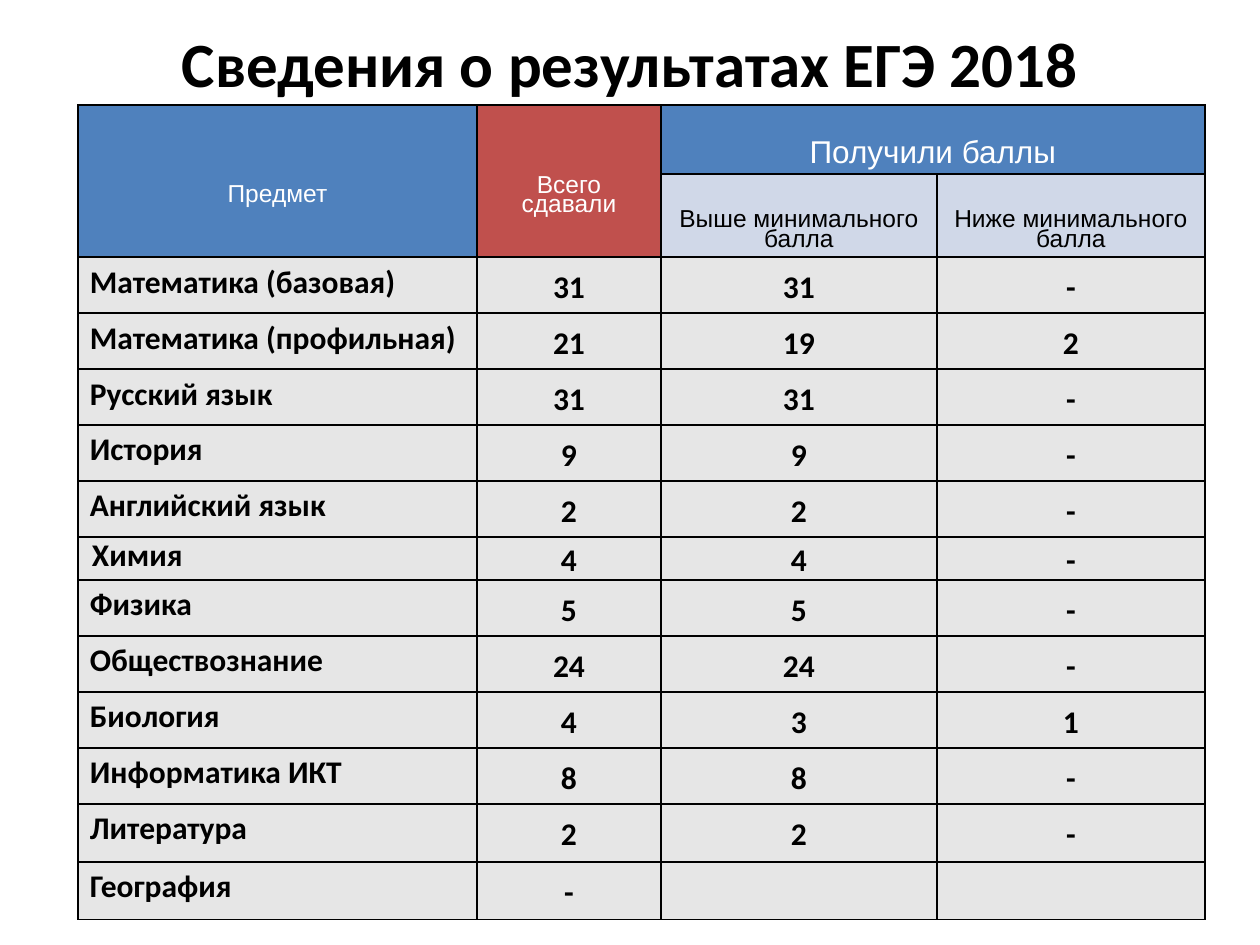
from dataclasses import dataclass

from lxml.etree import SubElement
from pptx import Presentation
from pptx.dml.color import RGBColor as RGB
from pptx.enum.text import MSO_ANCHOR as ANCHOR, PP_ALIGN as ALIGN
from pptx.oxml.ns import qn
from pptx.util import Emu, Pt

PX = 914400 // 126


@dataclass(frozen=True)
class Theme:
    white: str = "FFFFFF"
    black: str = "000000"
    blue: str = "4F81BD"
    red: str = "C0504D"
    pale_blue: str = "D0D8E8"
    grey: str = "E6E6E6"
    head_font: str = "Arial"
    body_font: str = "Calibri"
    title_size: int = 36
    body_size: int = 18
    head_size: int = 14
    border: int = 1


T = Theme()


def write(tf, text, size, font, color, bold, align, spacing=None):
    p = tf.paragraphs[0]
    p.alignment = align
    p.line_spacing = spacing
    r = p.add_run()
    r.text = text
    r.font.size = Pt(size)
    r.font.name = font
    r.font.bold = bold
    r.font.color.rgb = RGB.from_string(color)


def style_cell(cell, fill, margins):
    """Set borders, fill and the left, top, right, bottom margins in px."""
    tc_pr = cell._tc.get_or_add_tcPr()
    for side in ("lnL", "lnR", "lnT", "lnB"):
        ln = SubElement(tc_pr, qn(f"a:{side}"), w=str(Pt(T.border)))
        SubElement(SubElement(ln, qn("a:solidFill")), qn("a:srgbClr"), val=T.black)
    cell.fill.solid()
    cell.fill.fore_color.rgb = RGB.from_string(fill)
    cell.margin_left, cell.margin_top, cell.margin_right, cell.margin_bottom = (
        Emu(m * PX) for m in margins)


prs = Presentation()
prs.slide_width, prs.slide_height = Emu(1260 * PX), Emu(945 * PX)
s = prs.slides.add_slide(prs.slide_layouts[5])

# Title
title = s.shapes.title
title.left, title.top, title.width, title.height = (
    Emu(v * PX) for v in (63, 16, 1134, 92))
title.fill.solid()
title.fill.fore_color.rgb = RGB.from_string(T.white)
title.text_frame.vertical_anchor = ANCHOR.MIDDLE
write(title.text_frame, "Сведения о результатах ЕГЭ 2018",
      T.title_size, T.body_font, T.black, True, ALIGN.CENTER)

# Results: subject, total, above minimum, below minimum
results = [
    ("Математика (базовая)", "31", "31", "-"),
    ("Математика (профильная)", "21", "19", "2"),
    ("Русский язык", "31", "31", "-"),
    ("История", "9", "9", "-"),
    ("Английский язык", "2", "2", "-"),
    ("Химия", "4", "4", "-"),
    ("Физика", "5", "5", "-"),
    ("Обществознание", "24", "24", "-"),
    ("Биология", "4", "3", "1"),
    ("Информатика ИКТ", "8", "8", "-"),
    ("Литература", "2", "2", "-"),
    ("География", "-", "", ""),
]
COMPACT = "Химия"
col_widths = [399, 184, 276, 268]
row_heights = [69, 82] + [56] * 5 + [42] + [56] * 4 + [58] * 2

table = s.shapes.add_table(
    len(row_heights), len(col_widths), Emu(78 * PX), Emu(105 * PX),
    Emu(sum(col_widths) * PX), Emu(sum(row_heights) * PX)).table
for col, width in zip(table.columns, col_widths):
    col.width = Emu(width * PX)
for row, height in zip(table.rows, row_heights):
    row.height = Emu(height * PX)

# Header: row, column, last row, last column, text, size, text colour, fill
headers = [
    (0, 0, 1, 0, "Предмет", T.head_size, T.white, T.blue),
    (0, 1, 1, 1, "Всего сдавали", T.head_size, T.white, T.red),
    (0, 2, 0, 3, "Получили баллы", T.body_size, T.white, T.blue),
    (1, 2, 1, 2, "Выше минимального балла", T.head_size, T.black, T.pale_blue),
    (1, 3, 1, 3, "Ниже минимального балла", T.head_size, T.black, T.pale_blue),
]
for top, left, bottom, right, text, size, color, fill in headers:
    for i in range(top, bottom + 1):
        for j in range(left, right + 1):
            style_cell(table.cell(i, j), fill, (12, 38, 12, 6))
    cell = table.cell(top, left)
    if (top, left) != (bottom, right):
        cell.merge(table.cell(bottom, right))
    cell.vertical_anchor = ANCHOR.MIDDLE
    write(cell.text_frame, text, size, T.head_font, color, False, ALIGN.CENTER, 0.71)

# Body
for i, record in enumerate(results, start=2):
    compact = record[0] == COMPACT
    for j, text in enumerate(record):
        cell = table.cell(i, j)
        if j == 0:
            margins = (14, 0, 0, 0) if compact else (12, 6, 12, 6)
            align, spacing = ALIGN.LEFT, None
        else:
            margins = (0, 3, 0, 0) if compact else (12, 10, 12, 6)
            align, spacing = ALIGN.CENTER, 1.04
        style_cell(cell, T.grey, margins)
        if text:
            write(cell.text_frame, text, T.body_size, T.body_font, T.black,
                  True, align, spacing)

prs.save("out.pptx")
